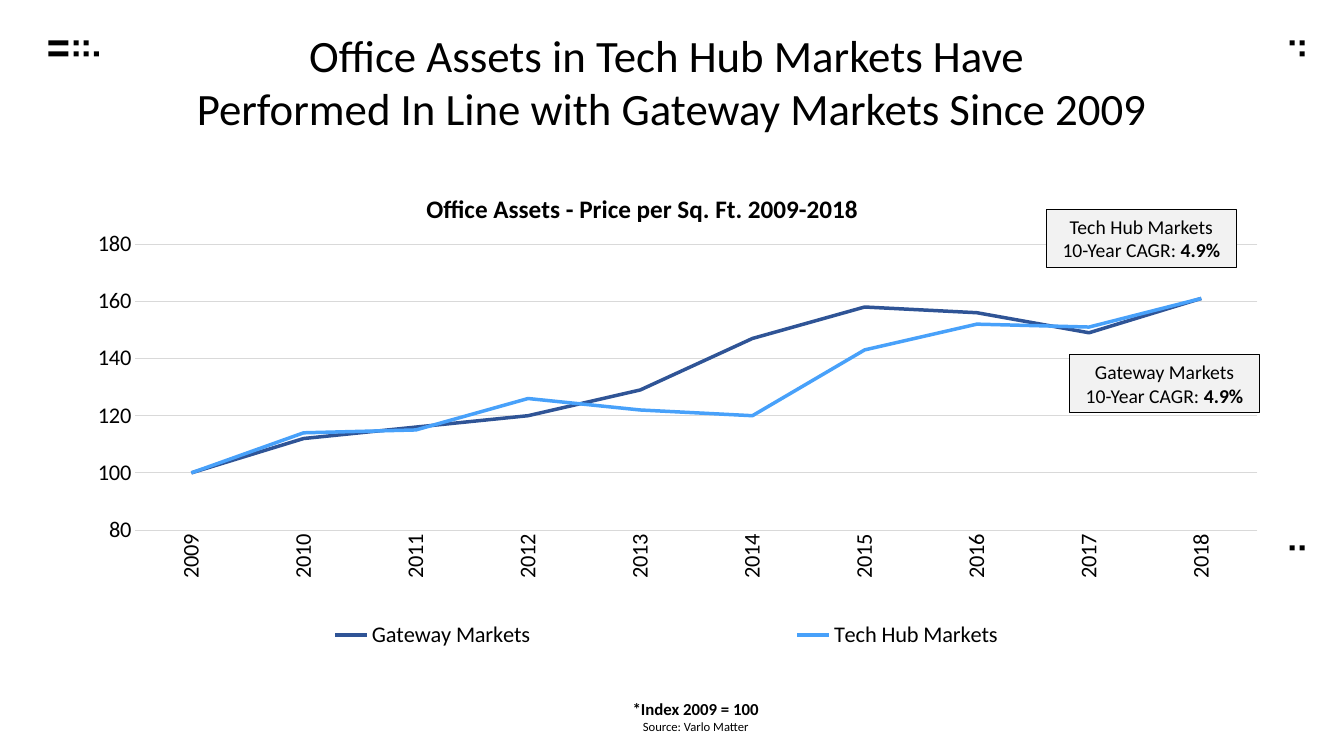
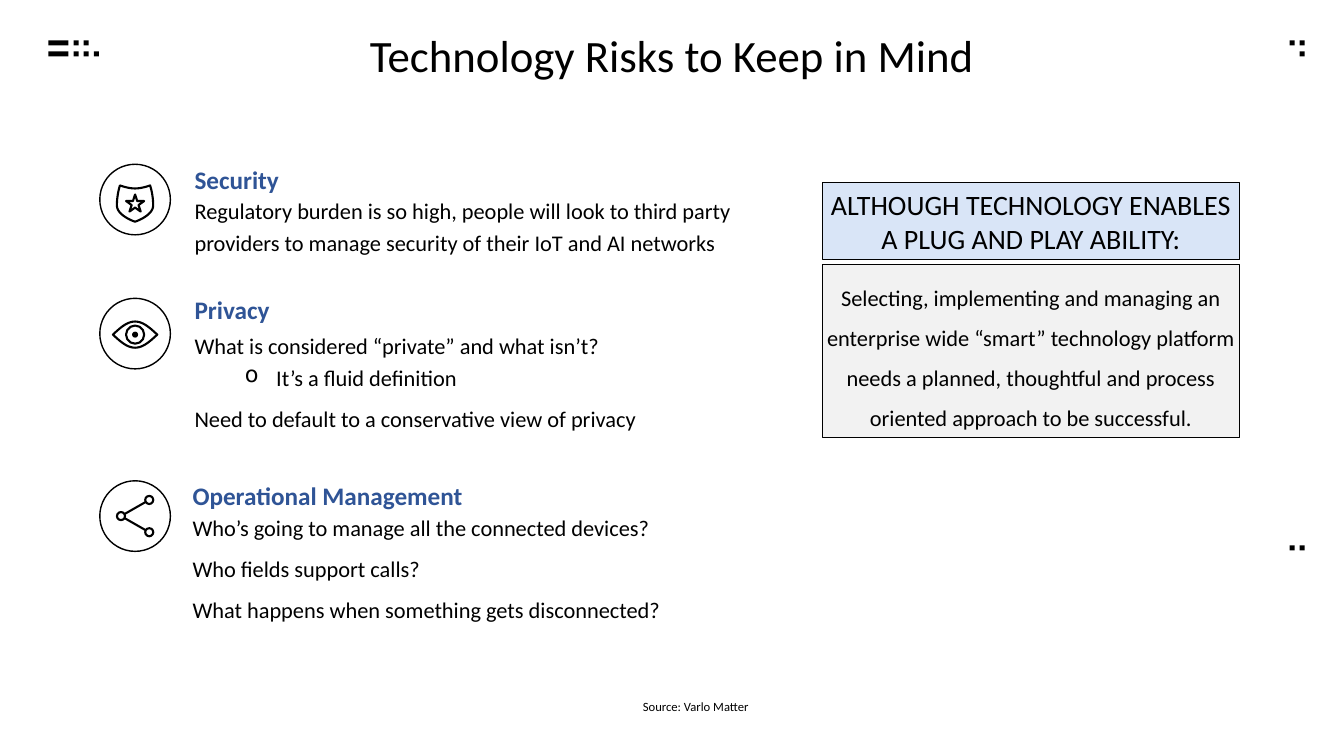
import math

import pptx
import pptx.chart.data
import pptx.dml.color
import pptx.enum.chart
import pptx.enum.shapes
import pptx.enum.text
import pptx.oxml
import pptx.oxml.ns
import pptx.util

Inches = pptx.util.Inches
Pt = pptx.util.Pt
RGB = pptx.dml.color.RGBColor.from_string
SHAPE = pptx.enum.shapes.MSO_SHAPE
ANCHOR = pptx.enum.text.MSO_ANCHOR
CENTER = pptx.enum.text.PP_ALIGN.CENTER
LEFT = pptx.enum.text.PP_ALIGN.LEFT

FONT = "Calibri"
COLORS = {
    "ink": "000000",
    "paper": "FFFFFF",
    "navy": "2F5496",
    "sky": "48A1FA",
    "pale": "D9E5F7",
    "panel": "F2F2F2",
    "grid": "D9D9D9",
}
ICON_WEIGHT = 1.5
ICON_CENTER = 1.34


def style(frame, size, align=LEFT, color="ink", bold=None, spacing=None, insets=None):
    """Format all the text of a frame; insets are left, top, right, bottom."""
    frame.word_wrap = True
    if insets:
        (frame.margin_left, frame.margin_top,
         frame.margin_right, frame.margin_bottom) = map(Inches, insets)
    for paragraph in frame.paragraphs:
        paragraph.alignment = align
        paragraph.line_spacing = spacing
        for run in paragraph.runs:
            run.font.name = FONT
            run.font.size = Pt(size)
            run.font.color.rgb = RGB(COLORS[color])
            if bold is not None:
                run.font.bold = bold


def draw(shapes, preset, box, fill=None, weight=None):
    """Add a preset shape, or outline a finished one when box is None."""
    shape = preset if box is None else shapes.add_shape(preset, *map(Inches, box))
    shape.shadow.inherit = False
    if fill:
        shape.fill.solid()
        shape.fill.fore_color.rgb = RGB(COLORS[fill])
    else:
        shape.fill.background()
    if weight:
        shape.line.color.rgb = RGB(COLORS["ink"])
        shape.line.width = Pt(weight)
    else:
        shape.line.fill.background()
    return shape


deck = pptx.Presentation()
deck.slide_width = Inches(13.33)
deck.slide_height = Inches(7.5)
layout = deck.slide_layouts[5]

# Shared title place
for holder in list(layout.placeholders):
    if holder.placeholder_format.idx:
        holder.element.getparent().remove(holder.element)
    else:
        holder.left, holder.top = 0, Inches(0.27)
        holder.width, holder.height = deck.slide_width, Inches(1.08)

# Titles and source lines
pages = []
for title, source in [
    ("Office Assets in Tech Hub Markets Have \n"
     "Performed In Line with Gateway Markets Since 2009",
     "*Index 2009 = 100\nSource: Varlo Matter"),
    ("Technology Risks to Keep in Mind", "Source: Varlo Matter"),
]:
    slide = deck.slides.add_slide(layout)
    heading = slide.shapes.title.text_frame
    heading.text = title
    heading.auto_size = pptx.enum.text.MSO_AUTO_SIZE.NONE
    heading.vertical_anchor = ANCHOR.TOP
    style(heading, 32, CENTER, insets=(0, 0, 0, 0))
    footer = slide.shapes.add_textbox(
        Inches(2.1), Inches(6.88), Inches(9.6), Inches(0.6)).text_frame
    footer.text = source
    style(footer, 9, CENTER)
    pages.append((slide.shapes, footer))
(market, market_footer), (risk, _) = pages
index_note = market_footer.paragraphs[0].runs[0].font
index_note.size = Pt(12)
index_note.bold = True

# Corner marks, kept on the layout
for left, top, width in [
    (0.48, 0.4, 0.2), (0.73, 0.4, 0.05), (0.83, 0.4, 0.05),
    (0.48, 0.51, 0.2), (0.73, 0.51, 0.05), (0.83, 0.51, 0.05), (0.93, 0.51, 0.05),
    (12.79, 0.4, 0.05), (12.89, 0.4, 0.05), (12.89, 0.51, 0.05),
    (12.79, 5.41, 0.05), (12.89, 5.41, 0.05),
]:
    mark = draw(market, SHAPE.RECTANGLE, (left, top, width, 0.05), "ink")
    layout.shapes.element.append(mark.element)

# Slide 1: price index chart
prices = pptx.chart.data.CategoryChartData(number_format="0")
prices.categories = [str(year) for year in range(2009, 2019)]
prices.add_series("Gateway Markets", [100, 112, 116, 120, 129, 147, 158, 156, 149, 161])
prices.add_series("Tech Hub Markets", [100, 114, 115, 126, 122, 120, 143, 152, 151, 161])
chart = market.add_chart(
    pptx.enum.chart.XL_CHART_TYPE.LINE,
    Inches(0.75), Inches(1.76), Inches(11.84), Inches(4.73), prices).chart
chart.font.name = FONT
chart.font.size = Pt(16)
chart.font.color.rgb = RGB(COLORS["ink"])
chart.has_title = True
chart.chart_title.text_frame.text = "Office Assets - Price per Sq. Ft. 2009-2018"
style(chart.chart_title.text_frame, 18, CENTER, bold=True)
chart.has_legend = True
chart.legend.position = pptx.enum.chart.XL_LEGEND_POSITION.BOTTOM
chart.legend.include_in_layout = False

chart.plots[0].vary_by_categories = False
for series, color in zip(chart.plots[0].series, ("navy", "sky")):
    series.smooth = False
    series.marker.style = pptx.enum.chart.XL_MARKER_STYLE.NONE
    series.format.line.color.rgb = RGB(COLORS[color])
    series.format.line.width = Pt(2.5)

years, price_axis = chart.category_axis, chart.value_axis
for axis in (years, price_axis):
    axis.major_tick_mark = pptx.enum.chart.XL_TICK_MARK.NONE
    axis.tick_labels.font.size = Pt(16)
    axis.tick_labels.font.name = FONT
    axis.tick_labels.font.color.rgb = RGB(COLORS["ink"])
price_axis.minimum_scale = 80
price_axis.maximum_scale = 180
price_axis.major_unit = 20
price_axis.tick_labels.number_format = "0"
price_axis.tick_labels.number_format_is_linked = False
price_axis.format.line.fill.background()
for line in (years.format.line, price_axis.major_gridlines.format.line):
    line.color.rgb = RGB(COLORS["grid"])
    line.width = Pt(0.75)
for body in chart.element.xpath(".//c:catAx/c:txPr/a:bodyPr"):
    body.set("rot", "-5400000")
    body.set("vert", "horz")

# Chart parts placed as fractions of the chart area
for part, position, place in [
    ("title", 1, {"x": 0.29, "y": 0.02}),
    ("plotArea", 0, {"x": 0.05, "y": 0.14, "w": 0.94, "h": 0.6}),
    ("legend", 1, {"x": 0, "y": 0.92, "w": 0.99, "h": 0.08}),
]:
    element = chart.element.xpath("c:chart/c:" + part)[0]
    for old in element.xpath("c:layout"):
        element.remove(old)
    target = '<c:layoutTarget val="inner"/>' if part == "plotArea" else ""
    modes = "".join(f'<c:{key}Mode val="edge"/>' for key in "xy")
    values = "".join(f'<c:{key} val="{value}"/>' for key, value in place.items())
    element.insert(position, pptx.oxml.parse_xml(
        f'<c:layout {pptx.oxml.ns.nsdecls("c")}><c:manualLayout>'
        f"{target}{modes}{values}</c:manualLayout></c:layout>"))

# Growth callouts
for label, left, top in [("Gateway Markets", 10.61, 3.52), ("Tech Hub Markets", 10.38, 2.08)]:
    callout = draw(market, SHAPE.RECTANGLE, (left, top, 1.88, 0.57), "panel", 0.75).text_frame
    callout.text = f"{label}\n10-Year CAGR: "
    rate = callout.paragraphs[1].add_run()
    rate.text = "4.9%"
    style(callout, 14, CENTER)
    rate.font.bold = True

# Slide 2: risks
risks = [
    ("Security", 1.93, 1.63, 1.63, 1.9,
     ["Regulatory burden is so high, people will look to third party "
      "providers to manage security of their IoT and AI networks"], 0),
    ("Privacy", 1.93, 2.96, 2.92, 3.24,
     ["What is considered “private” and what isn’t?", "It’s a fluid definition",
      "Need to default to a conservative view of privacy"], 0),
    ("Operational Management", 1.91, 4.77, 4.77, 5.05,
     ["Who’s going to manage all the connected devices?", "Who fields support calls?",
      "What happens when something gets disconnected?"], 6),
]
for name, left, icon_top, name_top, detail_top, details, gap in risks:
    draw(risk, SHAPE.OVAL, (0.99, icon_top, 0.7, 0.7), weight=1)
    label = risk.add_textbox(
        Inches(left), Inches(name_top), Inches(5.7), Inches(0.3)).text_frame
    label.text = name
    style(label, 18, color="navy", bold=True, insets=(0, 0, 0, 0))
    detail = risk.add_textbox(
        Inches(left), Inches(detail_top), Inches(5.7), Inches(1.1)).text_frame
    detail.text = "\n".join(details)
    style(detail, 16, spacing=1.2, insets=(0, 0, 0.1, 0))
    for paragraph in detail.paragraphs:
        paragraph.space_after = Pt(gap)
        if paragraph.text == "It’s a fluid definition":
            paragraph.space_after = Pt(6)
            properties = paragraph.runs[0].font and paragraph._p.get_or_add_pPr()
            properties.set("marL", str(Inches(0.81)))
            properties.set("indent", str(Inches(-0.31)))
            properties.append(pptx.oxml.parse_xml(
                f'<a:buChar {pptx.oxml.ns.nsdecls("a")} char="o"/>'))

# Shield and eye outlines, as offsets from the icon centre line
shield_half = []
for curve in [
    [(0, 1.87), (0.06, 1.87), (0.12, 1.85), (0.15, 1.84)],
    [(0.15, 1.84), (0.17, 1.91), (0.18, 1.97), (0.18, 2.04)],
    [(0.18, 2.04), (0.18, 2.12), (0.06, 2.18), (0, 2.2)],
]:
    for step in range(12):
        t = step / 12
        weights = [math.comb(3, k) * t**k * (1 - t) ** (3 - k) for k in range(4)]
        shield_half.append(tuple(
            sum(w * point[axis] for w, point in zip(weights, curve)) for axis in (0, 1)))
shield_half.append((0, 2.2))
shield = shield_half + [(-x, y) for x, y in reversed(shield_half[1:-1])]
eye_half = [(-0.22 + 0.02 * step, 0.13 * math.cos(math.pi * (step - 11) / 22))
            for step in range(23)]
eye = ([(x, 3.32 - rise) for x, rise in eye_half]
       + [(x, 3.32 + rise) for x, rise in reversed(eye_half[1:-1])])
for outline in (shield, eye):
    points = [(Inches(ICON_CENTER + x), Inches(y)) for x, y in outline]
    builder = risk.build_freeform(*points[0])
    builder.add_line_segments(points[1:], close=True)
    draw(risk, builder.convert_to_shape(), None, weight=ICON_WEIGHT)
draw(risk, SHAPE.STAR_5_POINT, (1.25, 1.93, 0.18, 0.17), weight=ICON_WEIGHT)
draw(risk, SHAPE.OVAL, (1.25, 3.23, 0.18, 0.18), weight=ICON_WEIGHT)
draw(risk, SHAPE.OVAL, (1.31, 3.29, 0.06, 0.06), "ink")

# Share icon: a hub joined to two nodes
hub, nodes = (1.2, 5.12), [(1.48, 4.96), (1.48, 5.28)]
for node in nodes:
    link = risk.add_connector(
        pptx.enum.shapes.MSO_CONNECTOR.STRAIGHT, *map(Inches, hub + node))
    link.line.color.rgb = RGB(COLORS["ink"])
    link.line.width = Pt(ICON_WEIGHT)
    link.element.spPr.append(pptx.oxml.parse_xml(
        f'<a:effectLst {pptx.oxml.ns.nsdecls("a")}/>'))
for x, y in [hub] + nodes:
    draw(risk, SHAPE.OVAL, (x - 0.04, y - 0.04, 0.08, 0.08), "paper", ICON_WEIGHT)

# Conclusion panel
for text, top, height, fill, size, spacing in [
    ("ALTHOUGH TECHNOLOGY ENABLES A PLUG AND PLAY ABILITY:", 1.81, 0.77, "pale", 20, 1),
    ("Selecting, implementing and managing an enterprise wide “smart” technology platform "
     "needs a planned, thoughtful and process oriented approach to be successful.",
     2.62, 1.72, "panel", 16, 1.5),
]:
    panel = draw(risk, SHAPE.RECTANGLE, (8.16, top, 4.13, height), fill, 0.75).text_frame
    panel.text = text
    style(panel, size, CENTER, spacing=spacing, insets=(0, 0.05, 0, 0.05))

deck.save("out.pptx")
